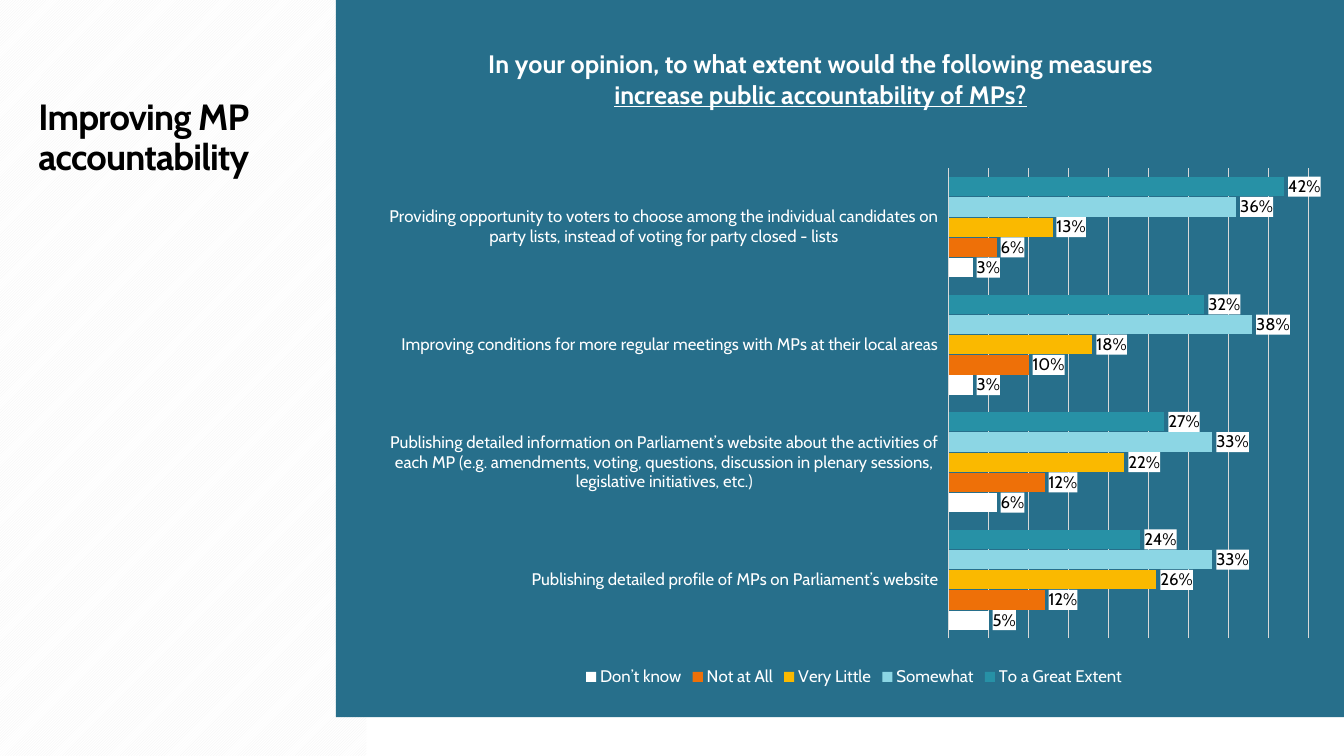
from dataclasses import dataclass

from pptx import Presentation
from pptx.chart.data import CategoryChartData
from pptx.dml.color import RGBColor
from pptx.enum.chart import XL_CHART_TYPE as ChartType
from pptx.enum.chart import XL_LABEL_POSITION as LabelPosition
from pptx.enum.chart import XL_LEGEND_POSITION as LegendPosition
from pptx.enum.chart import XL_TICK_LABEL_POSITION as TickLabels
from pptx.enum.chart import XL_TICK_MARK as TickMark
from pptx.enum.dml import MSO_PATTERN as Pattern
from pptx.enum.shapes import MSO_SHAPE as Shape
from pptx.enum.text import MSO_ANCHOR as Anchor
from pptx.enum.text import MSO_AUTO_SIZE as AutoSize
from pptx.enum.text import PP_ALIGN as Align
from pptx.oxml import parse_xml
from pptx.oxml.ns import nsdecls, qn
from pptx.util import Pt

EMU_PER_PX = 9525  # 96 px to the inch


@dataclass(frozen=True)
class Theme:
    font: str = "Cabin"
    white: str = "FFFFFF"
    black: str = "000000"
    stripe: str = "F2F2F2"
    panel: str = "276F8B"
    rule: str = "D9D9D9"
    heading_size: int = 26
    chart_title_size: int = 18
    label_size: int = 12


CATEGORIES = [
    "Providing opportunity to voters to choose among the individual candidates on "
    "party lists, instead of voting for party closed - lists",
    "Improving conditions for more regular meetings with MPs at their local areas",
    "Publishing detailed information on Parliament’s website about the activities of "
    "each MP (e.g. amendments, voting, questions, discussion in plenary sessions, "
    "legislative initiatives, etc.)",
    "Publishing detailed profile of MPs on Parliament’s website",
]

# Answer, colour, share per category
ANSWERS = [
    ("To a Great Extent", "2791A6", (0.42, 0.32, 0.27, 0.24)),
    ("Somewhat", "8CD6E4", (0.36, 0.38, 0.33, 0.33)),
    ("Very Little", "FAB900", (0.13, 0.18, 0.22, 0.26)),
    ("Not at All", "EE7008", (0.06, 0.10, 0.12, 0.12)),
    ("Don’t know", "FFFFFF", (0.03, 0.03, 0.06, 0.05)),
]


def px(*lengths):
    return [length * EMU_PER_PX for length in lengths]


def rgb(value):
    return RGBColor.from_string(value)


def set_layout(parent, target=None, **fractions):
    """Place a chart part by fractions of the chart's size."""
    old = parent.find(qn("c:layout"))
    inner = f'<c:layoutTarget val="{target}"/>' if target else ""
    modes = "".join(f'<c:{key}Mode val="edge"/>' for key in "xy")
    values = "".join(f'<c:{key} val="{value}"/>' for key, value in fractions.items())
    layout = parse_xml(f'<c:layout {nsdecls("c")}><c:manualLayout>{inner}{modes}{values}'
                       "</c:manualLayout></c:layout>")
    if old is not None:
        parent.replace(old, layout)
    elif parent.find(qn("c:tx")) is not None:
        parent.find(qn("c:tx")).addnext(layout)
    else:
        parent.insert(0, layout)


class SlideBuilder:
    def __init__(self, page, theme):
        self.page = page
        self.theme = theme

    def style(self, font, size, color, bold=False):
        font.name, font.size, font.bold = self.theme.font, Pt(size), bold
        font.color.rgb = rgb(color)

    def rectangle(self, left, top, width, height, color, back=None):
        shape = self.page.shapes.add_shape(Shape.RECTANGLE, *px(left, top, width, height))
        shape.shadow.inherit = False
        shape.line.fill.background()
        if back:
            shape.fill.patterned()
            shape.fill.pattern = Pattern.DARK_UPWARD_DIAGONAL
            shape.fill.fore_color.rgb = rgb(color)
            shape.fill.back_color.rgb = rgb(back)
        else:
            shape.fill.solid()
            shape.fill.fore_color.rgb = rgb(color)

    def heading(self, text, left, top, width, height):
        title = self.page.shapes.title
        title.left, title.top, title.width, title.height = px(left, top, width, height)
        frame = title.text_frame
        frame.text = text
        frame.word_wrap, frame.auto_size = True, AutoSize.NONE
        frame.vertical_anchor = Anchor.TOP
        para = frame.paragraphs[0]
        para.alignment, para.line_spacing = Align.LEFT, 0.9
        for span in para.runs:
            self.style(span.font, self.theme.heading_size, self.theme.black, bold=True)
            span.font._element.set("spc", "-60")
        # Bring the heading in front of the backdrop
        self.page.shapes.element.append(title.element)

    def bar_chart(self, left, top, width, height):
        data = CategoryChartData(number_format="0%")
        data.categories = CATEGORIES
        for name, _, shares in ANSWERS:
            data.add_series(name, shares)
        frame = self.page.shapes.add_chart(
            ChartType.BAR_CLUSTERED, *px(left, top, width, height), data)
        chart = frame.chart
        self.style(chart.font, self.theme.label_size, self.theme.white)

        # Bars
        plot = chart.plots[0]
        plot.gap_width, plot.overlap = 90, -5
        plot.vary_by_categories = False
        for series, (_, color, _) in zip(plot.series, ANSWERS):
            series.format.fill.solid()
            series.format.fill.fore_color.rgb = rgb(color)
            series.invert_if_negative = False
            self.bar_labels(series.data_labels)

        # Axes
        axis = chart.category_axis
        axis.reverse_order = True
        axis.major_tick_mark = axis.minor_tick_mark = TickMark.NONE
        axis.tick_label_position = TickLabels.LOW
        self.style(axis.tick_labels.font, self.theme.label_size, self.theme.white)
        scale = chart.value_axis
        scale.minimum_scale, scale.maximum_scale, scale.major_unit = 0, 0.45, 0.05
        scale.has_major_gridlines = True
        scale.visible = False
        for line in (axis.format.line, scale.major_gridlines.format.line):
            line.color.rgb, line.width = rgb(self.theme.rule), Pt(0.75)

        # Legend
        chart.has_legend = True
        chart.legend.position = LegendPosition.BOTTOM
        chart.legend.include_in_layout = False
        self.style(chart.legend.font, self.theme.label_size, self.theme.white)
        set_layout(chart.element.find(".//" + qn("c:plotArea")), "inner",
                   x=0.6, y=0.2, w=0.38, h=0.72)
        return chart

    def bar_labels(self, labels):
        labels.show_value = True
        labels.number_format, labels.number_format_is_linked = "0%", False
        labels.position = LabelPosition.OUTSIDE_END
        self.style(labels.font, self.theme.label_size, self.theme.black)
        labels._element.find(qn("c:txPr")).addprevious(parse_xml(
            f'<c:spPr {nsdecls("c", "a")}><a:solidFill><a:srgbClr val="{self.theme.white}"/>'
            "</a:solidFill></c:spPr>"))

    def chart_title(self, chart, plain, underlined):
        chart.has_title = True
        para = chart.chart_title.text_frame.paragraphs[0]
        for text in (plain, underlined):
            span = para.add_run()
            span.text = text
            self.style(span.font, self.theme.chart_title_size, self.theme.white, bold=True)
            span.font.underline = text == underlined
        set_layout(chart.element.find(".//" + qn("c:title")), x=0.11, y=0.01)


def main():
    deck = Presentation()
    deck.slide_width, deck.slide_height = px(1280, 720)
    theme = Theme()
    builder = SlideBuilder(deck.slides.add_slide(deck.slide_layouts[5]), theme)

    # Backdrop: striped side strip and chart panel
    builder.rectangle(0, 0, 349, 720, theme.stripe, back=theme.white)
    builder.rectangle(320, 0, 960, 683, theme.panel)

    # Heading
    builder.heading("Improving MP\vaccountability", 27, 90, 237, 417)

    # Survey chart
    chart = builder.bar_chart(363, 36, 901, 622)
    builder.chart_title(chart, "In your opinion, to what extent would the following measures ",
                        "increase public accountability of MPs?")

    deck.save("out.pptx")


if __name__ == "__main__":
    main()
